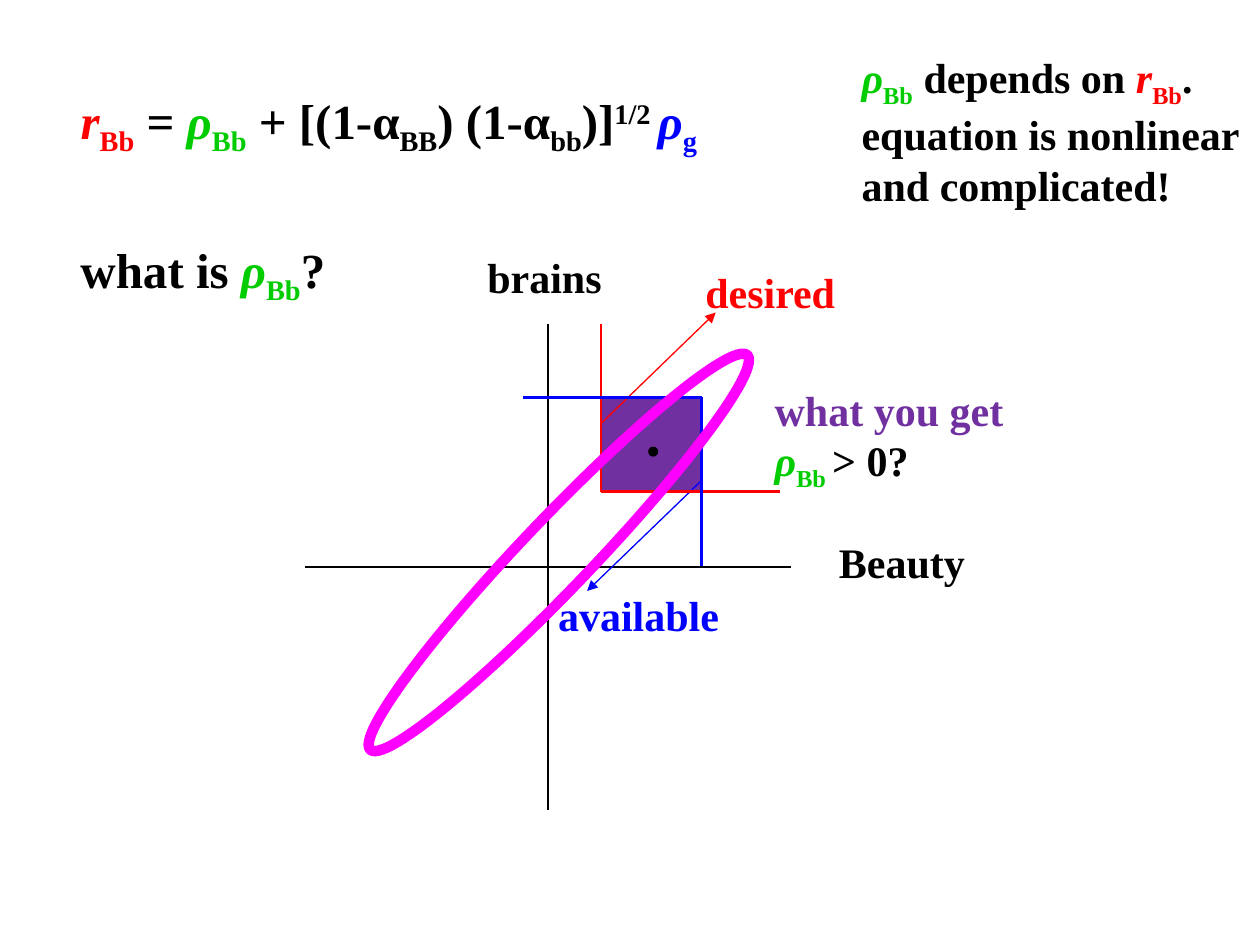
from pptx import Presentation
from pptx import util as u
from pptx.dml.color import RGBColor
from pptx.enum import shapes, text
from pptx.oxml.ns import qn
from lxml import etree

Pt = u.Pt
BLACK, RED, GREEN, BLUE = "000000", "FF0000", "00CC00", "0000FF"
PURPLE, MAGENTA = "7030A0", "FF00FF"
BASELINES = {"sub": "-25000", "super": "30000"}


def color(value):
    return RGBColor.from_string(value)


def write(box, paragraphs, size):
    """Fill a box with paragraphs of (words, colour, style) spans."""
    frame = box.text_frame
    frame.vertical_anchor = text.MSO_ANCHOR.TOP
    for number, spans in enumerate(paragraphs):
        para = frame.add_paragraph() if number else frame.paragraphs[0]
        para.alignment = text.PP_ALIGN.LEFT
        para.font.name, para.font.size, para.font.bold = "Times New Roman", Pt(size), True
        for words, hue, style in spans:
            span = para.add_run()
            span.text = words
            span.font.color.rgb = color(hue)
            if style == "italic":
                span.font.italic = True
            elif style:
                span.font._element.set("baseline", BASELINES[style])


deck = Presentation()
deck.slide_width, deck.slide_height = Pt(720), Pt(540)
page = deck.slides.add_slide(deck.slide_layouts[5])

# Equation as the title
r_bb = [("r", RED, "italic"), ("Bb", RED, "sub")]
rho_bb = [("ρ", GREEN, "italic"), ("Bb", GREEN, "sub")]
title = page.shapes.title
title.left, title.top, title.width, title.height = Pt(38.9), Pt(48.2), Pt(415.4), Pt(41)
title.text_frame.auto_size = text.MSO_AUTO_SIZE.NONE
write(title, [[
    *r_bb, (" = ", BLACK, ""), *rho_bb,
    (" + [(1-α", BLACK, ""), ("BB", BLACK, "sub"),
    (") (1-α", BLACK, ""), ("bb", BLACK, "sub"),
    (")]", BLACK, ""), ("1/2 ", BLACK, "super"),
    ("ρ", BLUE, "italic"), ("g", BLUE, "sub"),
]], 28)

# Square where desired and available overlap
left, top, right, bottom = 343.5, 227, 401, 281
square = page.shapes.add_shape(
    shapes.MSO_SHAPE.RECTANGLE, Pt(left), Pt(top), Pt(right - left), Pt(bottom - top))
dot = page.shapes.add_shape(shapes.MSO_SHAPE.OVAL, Pt(370.8), Pt(255.6), Pt(5), Pt(5))
for shape, hue in ((square, PURPLE), (dot, BLACK)):
    shape.shadow.inherit = False
    shape.fill.solid()
    shape.fill.fore_color.rgb = color(hue)
    shape.line.color.rgb = color(hue)
    shape.line.width = Pt(0.75)

# Axes, limits and arrows: start, end, colour, width, arrowhead
lines = [
    (174.5, 324, 452, 324, BLACK, 1.5, False),
    (313.2, 185, 313.2, 463, BLACK, 1.5, False),
    (left, 242, 409, 178.6, RED, 0.75, True),
    (right, 274.5, 335.5, 337.7, BLUE, 0.75, True),
    (left, bottom, 445.7, bottom, RED, 1.5, False),
    (left, 185, left, bottom, RED, 1.5, False),
    (right, top, 298.8, top, BLUE, 1.5, False),
    (right, 323.3, right, top, BLUE, 1.5, False),
]
for x1, y1, x2, y2, hue, width, arrow in lines:
    line = page.shapes.add_connector(
        shapes.MSO_CONNECTOR.STRAIGHT, Pt(x1), Pt(y1), Pt(x2), Pt(y2))
    line.line.color.rgb = color(hue)
    line.line.width = Pt(width)
    properties = line._element.spPr
    etree.SubElement(properties, qn("a:effectLst"))
    if arrow:
        etree.SubElement(properties.find(qn("a:ln")), qn("a:tailEnd"), type="triangle")

# Labels and remarks: left, top, width, height, size, paragraphs
labels = [
    (38.9, 133.2, 159.8, 41, 28, [[("what is ", BLACK, ""), *rho_bb, ("?", BLACK, "")]]),
    (472.3, 303.1, 87.1, 36, 24, [[("Beauty", BLACK, "")]]),
    (271.4, 140.4, 80.6, 36, 24, [[("brains", BLACK, "")]]),
    (396, 149, 89.3, 36, 24, [[("desired", RED, "")]]),
    (311.8, 333.4, 107.3, 36, 24, [[("available", BLUE, "")]]),
    (435.6, 216, 146.9, 65.5, 24, [
        [("what you get", PURPLE, "")],
        [*rho_bb[:1], ("Bb ", GREEN, "sub"), ("> 0?", BLACK, "")]]),
    (485.3, 25.9, 232.6, 94.3, 24, [
        [*rho_bb, (" depends on ", BLACK, ""), *r_bb, (".", BLACK, "")],
        [("equation is nonlinear", BLACK, "")],
        [("and complicated!", BLACK, "")]]),
]
for x, y, width, height, size, paragraphs in labels:
    box = page.shapes.add_textbox(Pt(x), Pt(y), Pt(width), Pt(height))
    box.text_frame.word_wrap = False
    write(box, paragraphs, size)

# Tilted ellipse of the correlation
ellipse = page.shapes.add_shape(
    shapes.MSO_SHAPE.OVAL, Pt(299.5), Pt(159.8), Pt(39.6), Pt(311.8))
ellipse.rotation = 43.7
ellipse.shadow.inherit = False
ellipse.fill.background()
ellipse.line.color.rgb = color(MAGENTA)
ellipse.line.width = Pt(6)

deck.save("out.pptx")
